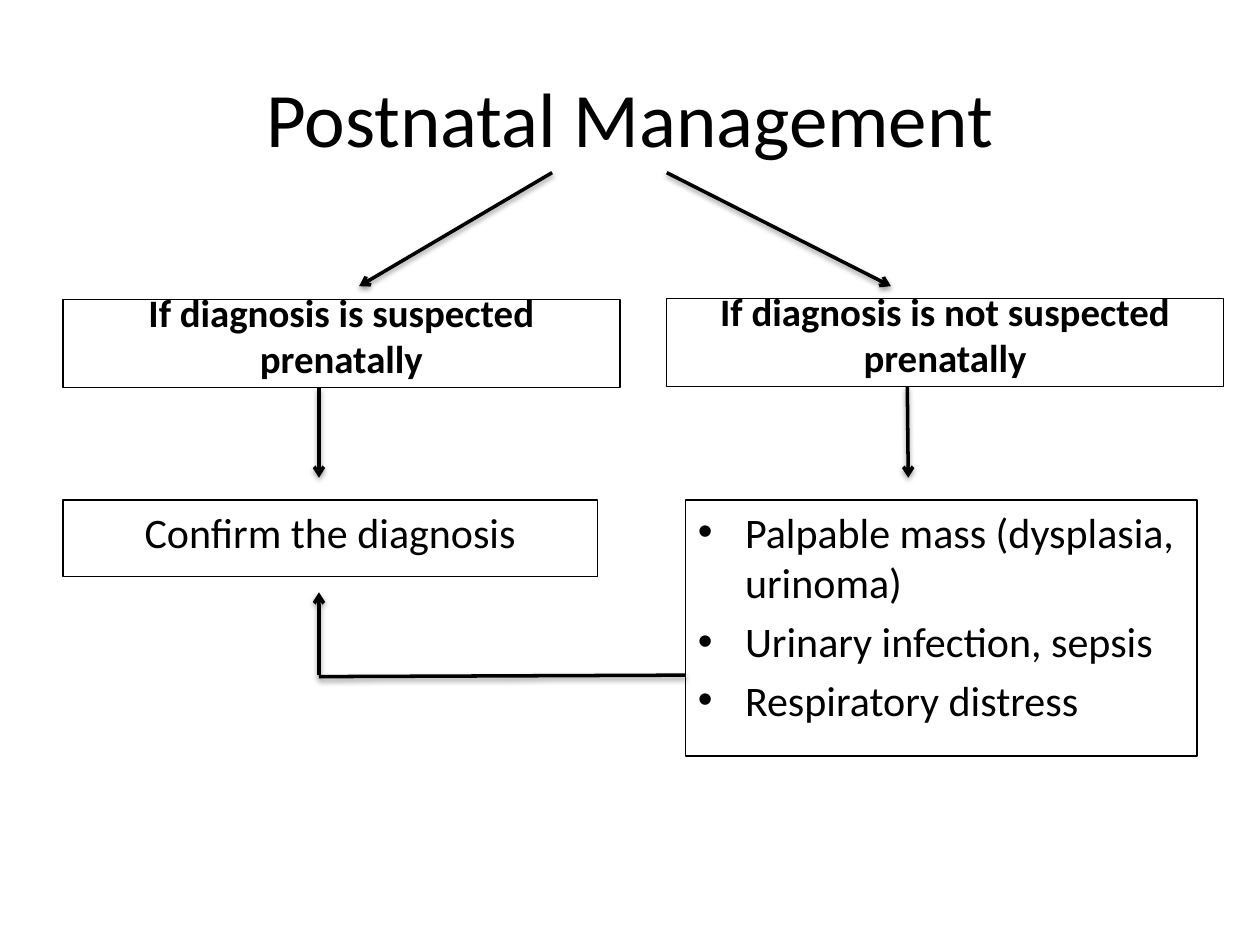
from lxml import etree
from pptx import Presentation, util as u
from pptx.dml.color import RGBColor
from pptx.enum import shapes, text
from pptx.oxml import parse_xml
from pptx.oxml.ns import nsdecls, qn

THEME = {
    "font": "Calibri",
    "ink": RGBColor(0, 0, 0),
    "title": u.Pt(44),
    "heading": u.Pt(22.2),
    "body": u.Pt(24),
    "border": u.Pt(0.75),
    "arrow": u.Pt(2),
}
ALIGN, ANCHOR = text.PP_ALIGN, text.MSO_ANCHOR
SHADOW = (
    f'<a:effectLst {nsdecls("a")}>'
    '<a:outerShdw blurRad="39370" dist="20320" dir="5400000" rotWithShape="0">'
    '<a:srgbClr val="000000"><a:alpha val="38000"/></a:srgbClr>'
    "</a:outerShdw></a:effectLst>"
)


def write(shape, lines, size, anchor, align=ALIGN.CENTER, bold=False, bullets=False):
    """Fill the shape with one formatted paragraph per line."""
    frame = shape.text_frame
    frame.word_wrap = True
    frame.vertical_anchor = anchor
    frame.text = "\n".join(lines)
    font_format = {"name": THEME["font"], "size": THEME[size], "bold": bold}
    for paragraph in frame.paragraphs:
        paragraph.alignment = align
        for name, value in font_format.items():
            setattr(paragraph.runs[0].font, name, value)
        paragraph.runs[0].font.color.rgb = THEME["ink"]
        if size != "title":
            paragraph.space_before = u.Pt(THEME[size].pt * 0.2)
        if bullets:
            properties = paragraph._p.get_or_add_pPr()
            properties.set("marL", str(u.Cm(0.95)))
            properties.set("indent", str(-u.Cm(0.95)))
            etree.SubElement(properties, qn("a:buFont"), typeface="Arial")
            etree.SubElement(properties, qn("a:buChar"), char="•")


presentation = Presentation()
presentation.slide_width, presentation.slide_height = u.Cm(25.4), u.Cm(19.05)
slide = presentation.slides.add_slide(presentation.slide_layouts[5])

title = slide.shapes.title
title_place = {"left": 1.27, "top": 0.76, "width": 22.86, "height": 3.18}
for name, value in title_place.items():
    setattr(title, name, u.Cm(value))
write(title, ["Postnatal Management"], "title", ANCHOR.MIDDLE)

# Boxes: left, top, width, height in cm, then lines and text format
heading = {"size": "heading", "anchor": ANCHOR.BOTTOM, "bold": True}
body = {"size": "body", "anchor": ANCHOR.TOP}
findings = {**body, "align": ALIGN.LEFT, "bullets": True}
boxes = [
    ((1.27, 6.04, 11.23, 1.78), ["If diagnosis is suspected prenatally"], heading),
    ((1.27, 10.08, 10.77, 1.55), ["Confirm the diagnosis"], body),
    ((13.44, 6.02, 11.23, 1.78), ["If diagnosis is not suspected prenatally"], heading),
    ((13.82, 10.08, 10.31, 5.16),
     ["Palpable mass (dysplasia, urinoma)", "Urinary infection, sepsis", "Respiratory distress"],
     findings),
]
for place, lines, text_format in boxes:
    box = slide.shapes.add_shape(shapes.MSO_SHAPE.RECTANGLE, *map(u.Cm, place))
    box.shadow.inherit = False
    box.fill.background()
    box.line.color.rgb = THEME["ink"]
    box.line.width = THEME["border"]
    write(box, lines, **text_format)

# Connectors: start x, start y, end x, end y in cm, then whether the end has an arrowhead
connectors = [
    (11.13, 3.48, 7.24, 5.77, True),
    (13.44, 3.48, 17.96, 5.77, True),
    (6.43, 7.82, 6.43, 9.63, True),
    (18.29, 7.8, 18.31, 9.63, True),
    (13.82, 13.61, 6.43, 13.64, False),
    (6.43, 13.61, 6.43, 11.94, True),
]
for *ends, has_arrowhead in connectors:
    connector = slide.shapes.add_connector(shapes.MSO_CONNECTOR.STRAIGHT, *map(u.Cm, ends))
    connector.line.color.rgb = THEME["ink"]
    connector.line.width = THEME["arrow"]
    if has_arrowhead:
        etree.SubElement(connector.line._get_or_add_ln(), qn("a:tailEnd"), type="arrow")
    connector._element.spPr.append(parse_xml(SHADOW))

presentation.save("out.pptx")
